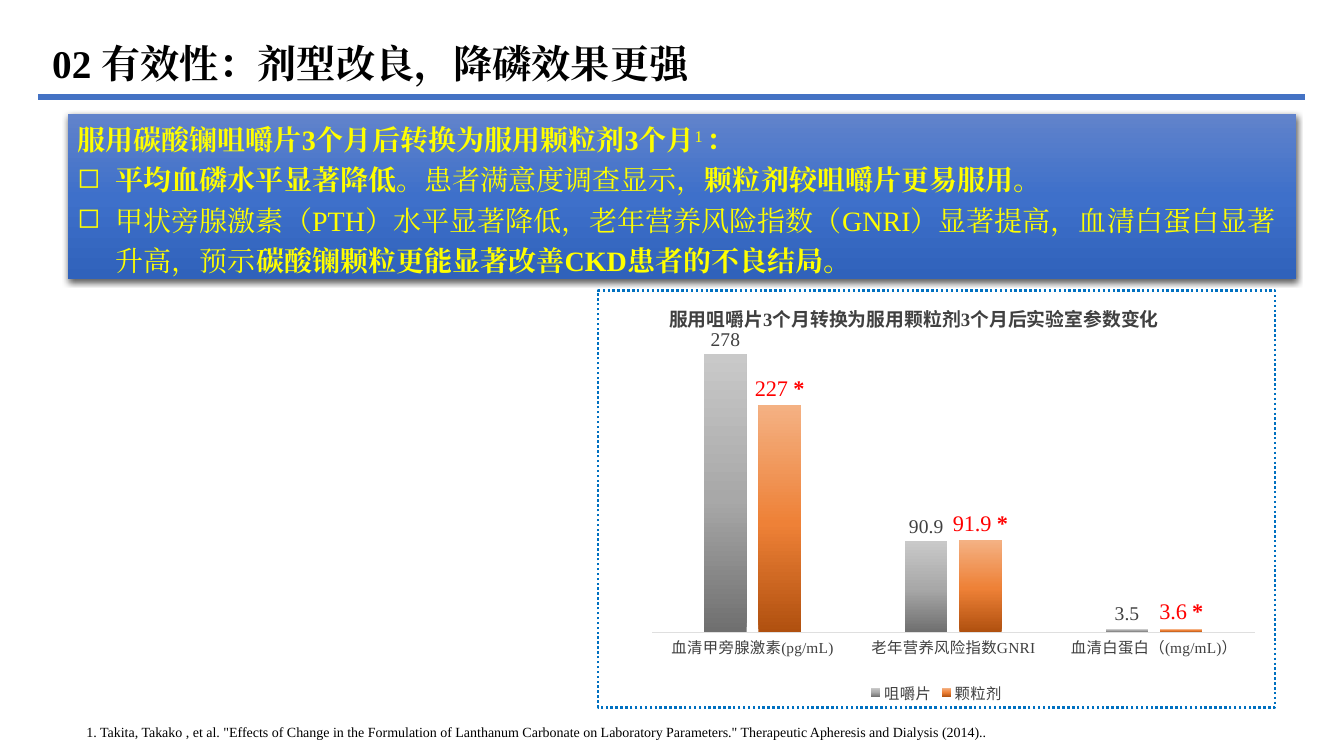
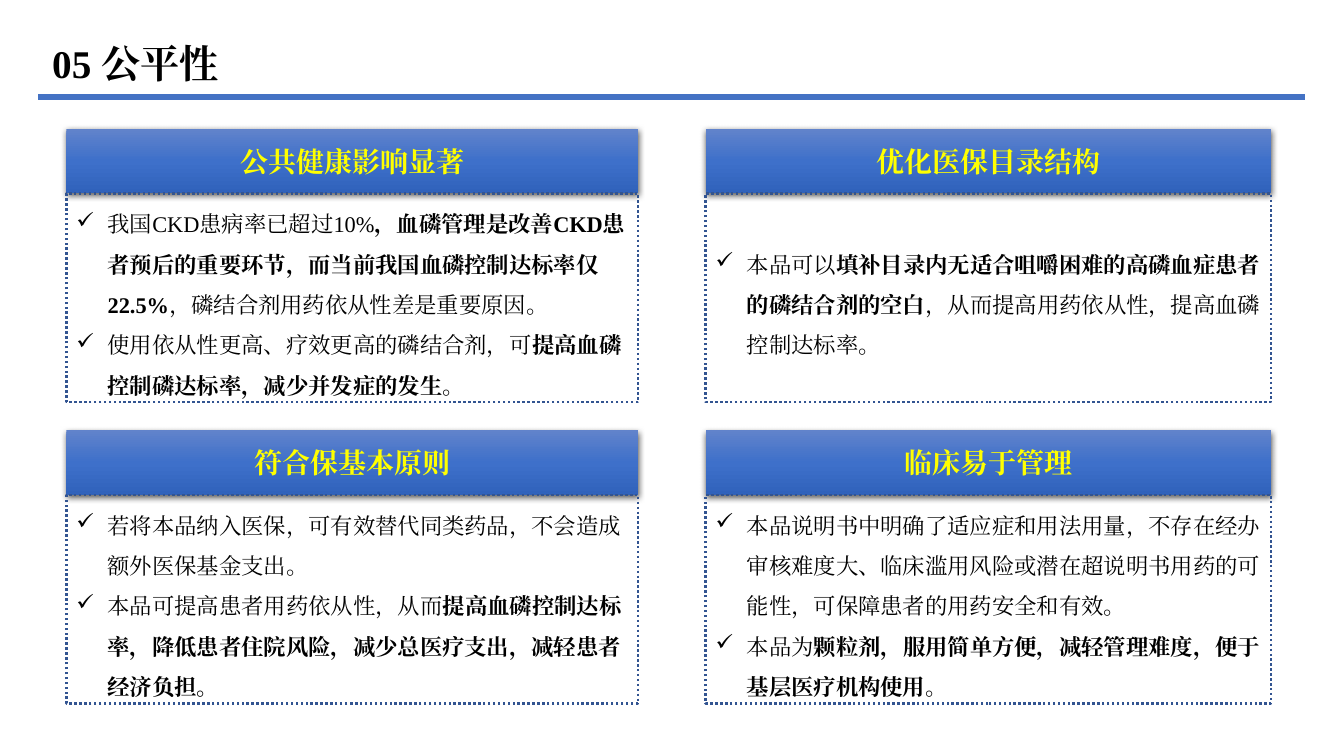
from pptx import Presentation
from pptx import util as u
from pptx.chart.data import CategoryChartData
from pptx.dml.color import RGBColor
from pptx.enum import chart as charts, dml, shapes, text
from pptx.oxml import parse_xml
from pptx.oxml.ns import nsdecls, qn

FONT = "Times New Roman"
BLACK, YELLOW, WHITE, RED = "000000", "FFFF00", "FFFFFF", "FF0000"
GRAY, AXIS, RULE = "404040", "DFDFDF", "4472C4"
CARD_LINE, CHART_LINE = "325491", "0070C0"
BANNER = [(0, "6183CB"), (50, "3E70CA"), (100, "3062BB")]
GRAY_BAR = [(0, "6F6F6F"), (48, "A8A8A8"), (100, "C9C9C9")]
ORANGE_BAR = [(0, "B0500F"), (48, "EE8137"), (100, "F4B183")]


def px(value):
    return u.Emu(value * 9144)


def color(value):
    return RGBColor.from_string(value)


def element(tag, attributes="", inner=""):
    return parse_xml(f'<{tag} {nsdecls("a", "c")} {attributes}>{inner}</{tag}>')


def style_font(font, size, value, bold=False):
    font.size, font.bold = u.Pt(size), bold
    font.color.rgb = color(value)
    font.name = FONT


def gradient(fill, owner, stops, angle):
    fill.gradient()
    stop_list = owner.find(".//" + qn("a:gsLst"))
    for stop in list(stop_list):
        stop_list.remove(stop)
    for position, value in stops:
        stop_list.append(element("a:gs", f'pos="{position * 1000}"', f'<a:srgbClr val="{value}"/>'))
    owner.find(".//" + qn("a:lin")).set("ang", str(angle * 60000))


def manual_layout(parent, index, **settings):
    layout = parent.find(qn("c:layout"))
    if layout is not None:
        parent.remove(layout)
    inner = "".join(f'<c:{name} val="{value}"/>' for name, value in settings.items())
    parent.insert(index, element("c:layout", "", f"<c:manualLayout>{inner}</c:manualLayout>"))


class Deck:
    def __init__(self):
        self.presentation = Presentation()
        self.presentation.slide_width = u.Inches(13.333)
        self.presentation.slide_height = u.Inches(7.5)
        self.slide = None

    def add_slide(self, title):
        self.slide = self.presentation.slides.add_slide(self.presentation.slide_layouts[6])
        self.rule(38, 96, 1295)
        box = self.slide.shapes.add_textbox(px(42), px(11), px(1164), px(72))
        frame = box.text_frame
        frame.word_wrap = True
        frame.auto_size = text.MSO_AUTO_SIZE.SHAPE_TO_FIT_TEXT
        self.add_text(frame, [["", title]], 28, BLACK, spacing=1.5)

    def rule(self, left, top, right):
        line = self.slide.shapes.add_connector(
            shapes.MSO_CONNECTOR.STRAIGHT, px(left), px(top), px(right), px(top))
        line.line.color.rgb = color(RULE)
        line.line.width = u.Pt(4.25)
        line.element.spPr.append(element("a:effectLst"))

    def add_text(self, frame, paragraphs, size, value, spacing=1.0, align=text.PP_ALIGN.LEFT):
        for index, pieces in enumerate(paragraphs):
            paragraph = frame.add_paragraph() if index else frame.paragraphs[0]
            paragraph.alignment = align
            paragraph.line_spacing = spacing
            for position, piece in enumerate(pieces):
                if piece:
                    run = paragraph.add_run()
                    run.text = piece
                    style_font(run.font, size, value, bold=position % 2 == 1)
                    run.font._element.append(element("a:ea", f'typeface="{FONT}"'))

    def bullet(self, paragraph, mark, indent):
        properties = paragraph._p.get_or_add_pPr()
        properties.set("marL", str(px(indent)))
        properties.set("indent", str(-px(indent)))
        properties.append(element("a:buChar", f'char="{mark}"'))

    def rectangle(self, left, top, width, height, anchor=text.MSO_ANCHOR.MIDDLE):
        shape = self.slide.shapes.add_shape(
            shapes.MSO_SHAPE.RECTANGLE, px(left), px(top), px(width), px(height))
        shape.shadow.inherit = False
        shape.fill.background()
        shape.line.fill.background()
        shape.text_frame.word_wrap = True
        shape.text_frame.vertical_anchor = anchor
        return shape

    def banner(self, left, top, width, height):
        shape = self.rectangle(left, top, width, height)
        properties = shape.element.spPr
        gradient(shape.fill, properties, BANNER, 90)
        properties.find(qn("a:effectLst")).append(element(
            "a:outerShdw", 'blurRad="57150" dist="19050" dir="5400000" algn="ctr" rotWithShape="0"',
            f'<a:srgbClr val="{BLACK}"><a:alpha val="63000"/></a:srgbClr>'))
        return shape.text_frame

    def summary(self, left, top, width, height, heading, points):
        frame = self.banner(left, top, width, height)
        self.add_text(frame, [heading] + points, 20, YELLOW, spacing=1.2)
        frame.paragraphs[0].runs[1].font._element.set("baseline", "30000")
        for paragraph in frame.paragraphs[1:]:
            self.bullet(paragraph, "◻", 38)

    def card(self, left, top, width, heading, points):
        header, body = 64, 207
        self.add_text(self.banner(left, top, width, header), [["", heading]], 20, YELLOW,
                      align=text.PP_ALIGN.CENTER)
        shape = self.rectangle(left, top + header, width, body)
        shape.line.color.rgb = color(CARD_LINE)
        shape.line.width = u.Pt(1.75)
        shape.line.dash_style = dml.MSO_LINE.ROUND_DOT
        self.add_text(shape.text_frame, points, 16, BLACK, spacing=1.5)
        for paragraph in shape.text_frame.paragraphs:
            self.bullet(paragraph, "✓", 31)

    def footnote(self, left, top, width, height, note):
        shape = self.rectangle(left, top, width, height, text.MSO_ANCHOR.TOP)
        shape.line.color.rgb = color(WHITE)
        shape.line.width = u.Pt(0.75)
        self.add_text(shape.text_frame, [[note]], 10, BLACK)

    def column_chart(self, left, top, width, height, title, categories, series):
        data = CategoryChartData()
        data.categories = categories
        for name, values, *_ in series:
            data.add_series(name, values)
        chart = self.slide.shapes.add_chart(
            charts.XL_CHART_TYPE.COLUMN_CLUSTERED,
            px(left), px(top), px(width), px(height), data).chart
        style_font(chart.font, 11, GRAY)
        self.chart_frame(chart.element)

        chart.has_title = True
        frame = chart.chart_title.text_frame
        frame.text = title
        style_font(frame.paragraphs[0].runs[0].font, 13.5, GRAY, bold=True)
        manual_layout(chart.element.find(".//" + qn("c:title")), 1,
                      xMode="edge", yMode="edge", x=0.1, y=0.02)
        manual_layout(chart.element.find(".//" + qn("c:plotArea")), 0, layoutTarget="inner",
                      xMode="edge", yMode="edge", x=0.08, y=0.1, w=0.89, h=0.72)

        chart.has_legend = True
        chart.legend.position = charts.XL_LEGEND_POSITION.BOTTOM
        chart.legend.include_in_layout = False
        style_font(chart.legend.font, 11, GRAY)

        value_axis, category_axis = chart.value_axis, chart.category_axis
        value_axis.minimum_scale, value_axis.maximum_scale = 0, 300
        value_axis.has_major_gridlines = False
        value_axis.visible = False
        category_axis.major_tick_mark = charts.XL_TICK_MARK.NONE
        category_axis.format.line.color.rgb = color(AXIS)
        category_axis.format.line.width = u.Pt(0.5)
        style_font(category_axis.tick_labels.font, 11, GRAY)

        plot = chart.plots[0]
        plot.vary_by_categories = False
        plot.gap_width, plot.overlap = 246, -28
        for bars, (_, values, stops, size, value, starred) in zip(plot.series, series):
            bars.invert_if_negative = False
            gradient(bars.format.fill, bars._element, stops, 270)
            labels = bars.data_labels
            labels.show_value = True
            labels.position = charts.XL_LABEL_POSITION.OUTSIDE_END
            style_font(labels.font, size, value)
            if starred:
                for index, number in enumerate(values):
                    label = bars.points[index].data_label
                    self.add_text(label.text_frame, [[f"{number} ", "*"]], size, value)
                    label.position = charts.XL_LABEL_POSITION.OUTSIDE_END

    def chart_frame(self, chart_space):
        corners = chart_space.find(qn("c:roundedCorners"))
        if corners is None:
            corners = element("c:roundedCorners")
            date = chart_space.find(qn("c:date1904"))
            if date is None:
                chart_space.insert(0, corners)
            else:
                date.addnext(corners)
        corners.set("val", "0")
        chart_space.find(qn("c:chart")).addnext(element(
            "c:spPr", "",
            f'<a:solidFill><a:srgbClr val="{WHITE}"/></a:solidFill>'
            f'<a:ln w="{u.Pt(1.75)}"><a:solidFill><a:srgbClr val="{CHART_LINE}"/></a:solidFill>'
            '<a:prstDash val="sysDot"/></a:ln>'))


def build_effectiveness(deck):
    deck.add_slide("02 有效性：剂型改良，降磷效果更强")
    deck.column_chart(
        592, 287, 674, 416, "服用咀嚼片3个月转换为服用颗粒剂3个月后实验室参数变化",
        ["血清甲旁腺激素(pg/mL)", "老年营养风险指数GNRI", "血清白蛋白（(mg/mL)）"],
        [("咀嚼片", (278, 90.9, 3.5), GRAY_BAR, 14, GRAY, False),
         ("颗粒剂", (227, 91.9, 3.6), ORANGE_BAR, 16, RED, True)])
    deck.summary(
        67, 113, 1219, 164, ["", "服用碳酸镧咀嚼片3个月后转换为服用颗粒剂3个月", "1 ", "："],
        [["", "平均血磷水平显著降低", "。患者满意度调查显示，", "颗粒剂较咀嚼片更易服用", "。"],
         ["甲状旁腺激素（PTH）水平显著降低，老年营养风险指数（GNRI）显著提高，血清白蛋白显著升高，预示",
          "碳酸镧颗粒更能显著改善CKD患者的不良结局", "。"]])
    deck.footnote(
        76, 713, 1224, 37,
        '1. Takita, Takako , et al. "Effects of Change in the Formulation of Lanthanum Carbonate '
        'on Laboratory Parameters." Therapeutic Apheresis and Dialysis (2014)..')


def build_fairness(deck):
    deck.add_slide("05 公平性")
    cards = [
        ("公共健康影响显著", [
            ["我国CKD患病率已超过10%",
             "，血磷管理是改善CKD患者预后的重要环节，而当前我国血磷控制达标率仅22.5%",
             "，磷结合剂用药依从性差是重要原因。"],
            ["使用依从性更高、疗效更高的磷结合剂，可", "提高血磷控制磷达标率，减少并发症的发生", "。"]]),
        ("优化医保目录结构", [
            ["本品可以", "填补目录内无适合咀嚼困难的高磷血症患者的磷结合剂的空白",
             "，从而提高用药依从性，提高血磷控制达标率。"]]),
        ("符合保基本原则", [
            ["若将本品纳入医保，可有效替代同类药品，不会造成额外医保基金支出。"],
            ["本品可提高患者用药依从性，从而",
             "提高血磷控制达标率，降低患者住院风险，减少总医疗支出，减轻患者经济负担。"]]),
        ("临床易于管理", [
            ["本品说明书中明确了适应症和用法用量，不存在经办审核难度大、临床滥用风险或潜在超说明书用药的可能性，"
             "可保障患者的用药安全和有效。"],
            ["本品为", "颗粒剂，服用简单方便，减轻管理难度，便于基层医疗机构使用", "。"]]),
    ]
    columns = [(66, 567), (700, 561)]
    for index, (heading, points) in enumerate(cards):
        row, column = divmod(index, 2)
        left, width = columns[column]
        deck.card(left, 128 + row * 299, width, heading, points)


def main():
    deck = Deck()
    build_effectiveness(deck)
    build_fairness(deck)
    deck.presentation.save("out.pptx")


if __name__ == "__main__":
    main()
